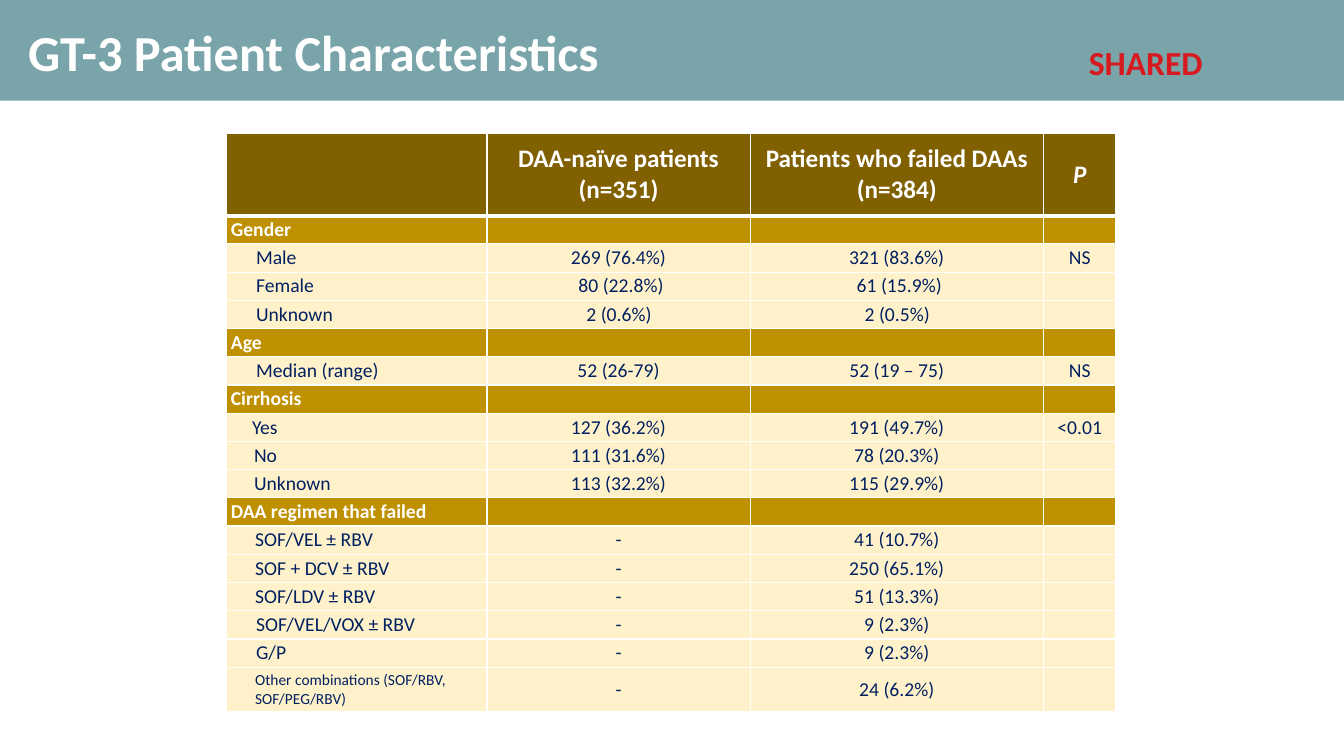
import dataclasses

import lxml.etree
import pptx
import pptx.dml.color
import pptx.enum.shapes
import pptx.enum.text
import pptx.oxml.ns
import pptx.util

Inches = pptx.util.Inches
ALIGN = pptx.enum.text.PP_ALIGN
MIDDLE = pptx.enum.text.MSO_ANCHOR.MIDDLE
qn = pptx.oxml.ns.qn


@dataclasses.dataclass(frozen=True)
class Theme:
    font: str = "Calibri"
    banner: str = "79A4AA"
    white: str = "FFFFFF"
    red: str = "D71A20"
    navy: str = "002060"
    header: str = "806000"
    section: str = "BF9000"
    row: str = "FFE699"
    row_alpha: int = 50
    title_size: int = 36
    tag_size: int = 24
    header_size: int = 18
    body_size: int = 14
    small_size: int = 11


THEME = Theme()

COLUMN_WIDTHS = (2.58, 2.61, 2.91, 0.72)
HEADER_HEIGHT, ROW_HEIGHT, LAST_HEIGHT = 0.82, 0.28, 0.44
HEADINGS = ("", "DAA-naïve patients\v(n=351)", "Patients who failed DAAs (n=384)", "P")
SECTION_INDENT = 0.04

# Section name, then rows of label, label indent, naïve, failed, P
SECTIONS = (
    ("Gender", (
        ("Male", 0.29, "269 (76.4%)", "321 (83.6%)", "NS"),
        ("Female", 0.29, "80 (22.8%)", "61 (15.9%)", ""),
        ("Unknown", 0.29, "2 (0.6%)", "2 (0.5%)", ""),
    )),
    ("Age", (
        ("Median (range)", 0.29, "52 (26-79)", "52 (19 – 75)", "NS"),
    )),
    ("Cirrhosis", (
        ("Yes", 0.25, "127 (36.2%)", "191 (49.7%)", "<0.01"),
        ("No", 0.27, "111 (31.6%)", "78 (20.3%)", ""),
        ("Unknown", 0.27, "113 (32.2%)", "115 (29.9%)", ""),
    )),
    ("DAA regimen that failed", (
        ("SOF/VEL ± RBV", 0.28, "-", "41 (10.7%)", ""),
        ("SOF + DCV ± RBV", 0.28, "-", "250 (65.1%)", ""),
        ("SOF/LDV ± RBV", 0.28, "-", "51 (13.3%)", ""),
        ("SOF/VEL/VOX ± RBV", 0.29, "-", "9 (2.3%)", ""),
        ("G/P", 0.29, "-", "9 (2.3%)", ""),
        ("Other combinations (SOF/RBV,\vSOF/PEG/RBV)", 0.28, "-", "24 (6.2%)", ""),
    )),
)
# Centred values that sit slightly to the right
VALUE_INDENTS = {"Female": 0.05, "Unknown": 0.01}


def rgb(value):
    return pptx.dml.color.RGBColor.from_string(value)


def write_text(frame, text, size, color, bold=False, italic=False, align=ALIGN.LEFT):
    frame.text = text
    para = frame.paragraphs[0]
    para.alignment = align
    for span in para.runs:
        span.font.name = THEME.font
        span.font.size = pptx.util.Pt(size)
        span.font.bold = bold
        span.font.italic = italic
        span.font.color.rgb = rgb(color)
    if not text:
        # Keeps an empty cell from stretching its row
        lxml.etree.SubElement(para._p, qn("a:endParaRPr"), sz=str(size * 100))


def set_borders(cell, bottom_width):
    properties = cell._tc.get_or_add_tcPr()
    for side, width in (("L", 1), ("R", 1), ("T", 1), ("B", bottom_width)):
        line = lxml.etree.SubElement(
            properties, qn(f"a:ln{side}"), w=str(pptx.util.Pt(width)))
        fill = lxml.etree.SubElement(line, qn("a:solidFill"))
        lxml.etree.SubElement(fill, qn("a:srgbClr"), val=THEME.white)


def style_cell(cell, fill, alpha=100, indent=0, bottom_width=1):
    cell.margin_left = Inches(indent)
    cell.margin_right = cell.margin_top = cell.margin_bottom = 0
    cell.vertical_anchor = MIDDLE
    set_borders(cell, bottom_width)
    cell.fill.solid()
    cell.fill.fore_color.rgb = rgb(fill)
    if alpha < 100:
        color = cell._tc.tcPr.find(f"{qn('a:solidFill')}/{qn('a:srgbClr')}")
        lxml.etree.SubElement(color, qn("a:alpha"), val=str(alpha * 1000))


def add_title(page, text):
    title = page.shapes.title
    title.left, title.top = Inches(0.18), Inches(0.15)
    title.width, title.height = Inches(6), Inches(0.71)
    title.text_frame.word_wrap = False
    title.text_frame.vertical_anchor = MIDDLE
    write_text(title.text_frame, text, THEME.title_size, THEME.white, bold=True)


def add_banner(page, width):
    banner = page.shapes.add_shape(
        pptx.enum.shapes.MSO_SHAPE.RECTANGLE, 0, 0, width, Inches(1))
    banner.shadow.inherit = False
    banner.fill.solid()
    banner.fill.fore_color.rgb = rgb(THEME.banner)
    banner.line.fill.background()
    # Place the banner behind the title
    page.shapes.title.element.addprevious(banner.element)


def add_tag(page, text):
    box = page.shapes.add_textbox(Inches(10.7), Inches(0.37), Inches(1.81), Inches(0.54))
    box.text_frame.word_wrap = True
    write_text(box.text_frame, text, THEME.tag_size, THEME.red, bold=True)


def fill_header(cells):
    for cell, heading in zip(cells, HEADINGS):
        style_cell(cell, THEME.header, bottom_width=3)
        write_text(cell.text_frame, heading, THEME.header_size, THEME.white,
                   bold=True, italic=heading == "P", align=ALIGN.CENTER)


def fill_section(cells, name):
    for column, cell in enumerate(cells):
        style_cell(cell, THEME.section, indent=SECTION_INDENT)
        write_text(cell.text_frame, "" if column else name,
                   THEME.body_size, THEME.white, bold=True)


def fill_row(cells, label, indent, *values):
    nudge = VALUE_INDENTS.get(label, 0) if indent == 0.29 else 0
    for column, (cell, text) in enumerate(zip(cells, (label, *values))):
        style_cell(cell, THEME.row, THEME.row_alpha, nudge if column else indent)
        size = THEME.small_size if "\v" in text else THEME.body_size
        write_text(cell.text_frame, text, size, THEME.navy,
                   align=ALIGN.CENTER if column else ALIGN.LEFT)


def add_patient_table(page):
    body_count = sum(1 + len(rows) for _, rows in SECTIONS)
    heights = (HEADER_HEIGHT, *[ROW_HEIGHT] * (body_count - 1), LAST_HEIGHT)
    table = page.shapes.add_table(
        len(heights), len(COLUMN_WIDTHS), Inches(2.25), Inches(1.32),
        Inches(sum(COLUMN_WIDTHS)), Inches(sum(heights))).table
    for column, width in zip(table.columns, COLUMN_WIDTHS):
        column.width = Inches(width)
    for row, height in zip(table.rows, heights):
        row.height = Inches(height)

    table_rows = iter(table.rows)
    fill_header(next(table_rows).cells)
    for name, rows in SECTIONS:
        fill_section(next(table_rows).cells, name)
        for row in rows:
            fill_row(next(table_rows).cells, *row)


def main():
    deck = pptx.Presentation()
    deck.slide_width, deck.slide_height = Inches(13.33), Inches(7.5)
    page = deck.slides.add_slide(deck.slide_layouts.get_by_name("Title Only"))
    # Heading band
    add_title(page, "GT-3 Patient Characteristics")
    add_banner(page, deck.slide_width)
    add_tag(page, "SHARED")
    # Patient data
    add_patient_table(page)
    deck.save("out.pptx")


if __name__ == "__main__":
    main()
